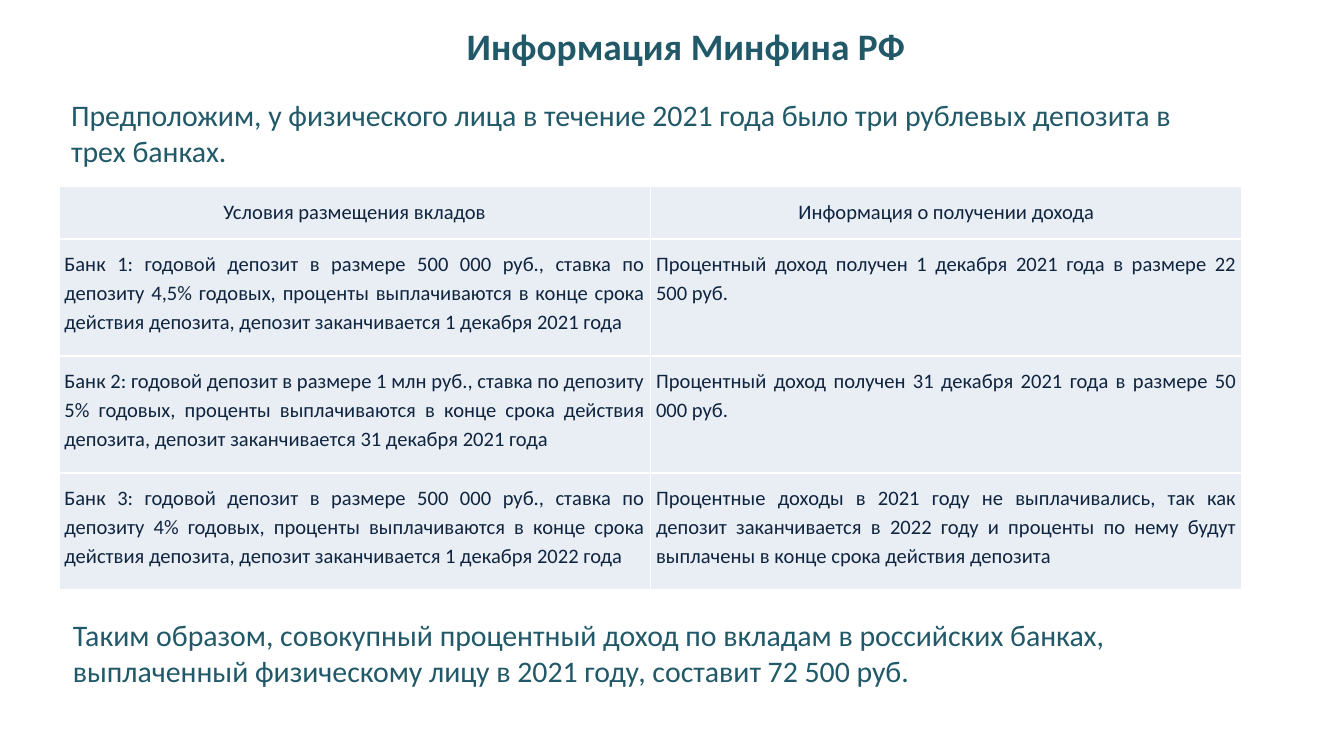
from lxml.etree import SubElement
from pptx import Presentation
from pptx.dml.color import RGBColor
from pptx.enum.text import MSO_AUTO_SIZE as Fit, PP_ALIGN as Align
from pptx.oxml.ns import qn
from pptx.util import Pt

# Content
TITLE = "Информация Минфина РФ"
INTRO = "Предположим, у физического лица в течение 2021 года было три рублевых депозита в трех банках."
TOTAL = ("Таким образом, совокупный процентный доход по вкладам в российских банках, "
         "выплаченный физическому лицу в 2021 году, составит 72 500 руб.")
TERMS = ("Банк {}: годовой депозит в размере {} руб., ставка по депозиту {} годовых, "
         "проценты выплачиваются в конце срока действия депозита, "
         "депозит заканчивается {} года")
PAID = "Процентный доход получен {} 2021 года в размере {} руб."
ROWS = [
    ("Условия размещения вкладов", "Информация о получении дохода"),
    (TERMS.format(1, "500 000", "4,5%", "1 декабря 2021"), PAID.format("1 декабря", "22 500")),
    (TERMS.format(2, "1 млн", "5%", "31 декабря 2021"), PAID.format("31 декабря", "50 000")),
    (TERMS.format(3, "500 000", "4%", "1 декабря 2022"),
     "Процентные доходы в 2021 году не выплачивались, так как депозит заканчивается "
     "в 2022 году и проценты по нему будут выплачены в конце срока действия депозита"),
]

# Formats
TEAL, NAVY, PALE, WHITE = "215968", "0F243E", "E9EDF4", "FFFFFF"
HEAD = dict(size=Pt(20), bold=True)
BODY = dict(size=Pt(16), bold=False)
CELL = dict(size=Pt(11), bold=False)
INSETS = dict(margin_left=Pt(3), margin_right=Pt(3), margin_top=Pt(5), margin_bottom=Pt(5))

# Text boxes: text, left, top, width, height, wrap, alignment, format
BOXES = [
    (TITLE, 242, 8.75, 251, 31.5, False, Align.CENTER, HEAD),
    (INTRO, 31, 48.25, 620.5, 46, True, Align.LEFT, BODY),
    (TOTAL, 32, 327, 634, 46, True, Align.LEFT, BODY),
]
LEFT, TOP, COL = 31.5, 100, 317
HIGH = [28] + [62.7] * 3


def color(code):
    return RGBColor.from_string(code)


def assign(thing, values):
    for name, value in values.items():
        setattr(thing, name, value)


def write(frame, text, align, hue, style):
    para = frame.paragraphs[0]
    para.alignment = align
    run = para.add_run()
    run.text = text
    run.font.name = "Calibri"
    run.font.color.rgb = color(hue)
    assign(run.font, style)
    return para


def border(cell):
    props = cell._tc.get_or_add_tcPr()
    for side in ("lnL", "lnR", "lnT", "lnB"):
        line = SubElement(props, qn("a:" + side), w=str(Pt(1)))
        fill = SubElement(line, qn("a:solidFill"))
        SubElement(fill, qn("a:srgbClr"), val=WHITE)


deck = Presentation()
deck.slide_width, deck.slide_height = Pt(720), Pt(405)
slide = deck.slides.add_slide(deck.slide_layouts[6])

# Title, introduction and conclusion
for text, x, y, wide, high, wrap, align, style in BOXES:
    frame = slide.shapes.add_textbox(Pt(x), Pt(y), Pt(wide), Pt(high)).text_frame
    assign(frame, dict(word_wrap=wrap, auto_size=Fit.SHAPE_TO_FIT_TEXT))
    write(frame, text, align, TEAL, style)

# Table of deposits
table = slide.shapes.add_table(len(ROWS), 2, Pt(LEFT), Pt(TOP), Pt(2 * COL), Pt(sum(HIGH))).table
for col in table.columns:
    col.width = Pt(COL)
for r, texts in enumerate(ROWS):
    table.rows[r].height = Pt(HIGH[r])
    for c, text in enumerate(texts):
        cell = table.cell(r, c)
        assign(cell, INSETS)
        border(cell)
        cell.fill.solid()
        cell.fill.fore_color.rgb = color(PALE)
        align = Align.JUSTIFY if r else Align.CENTER
        write(cell.text_frame, text, align, NAVY, CELL).line_spacing = 1.15

deck.save("out.pptx")
